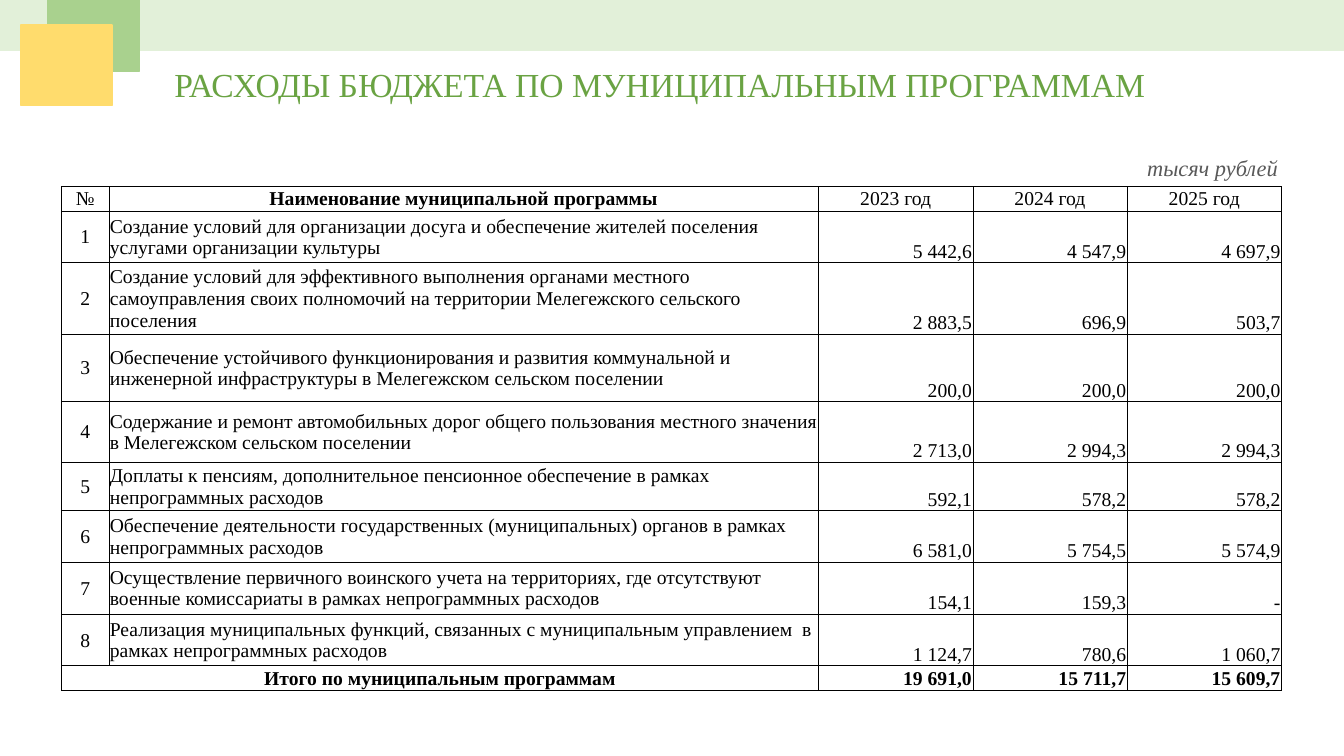
from lxml.etree import SubElement
from pptx import Presentation
from pptx.dml.color import RGBColor
from pptx.enum.shapes import MSO_SHAPE
from pptx.enum.text import MSO_ANCHOR, PP_ALIGN
from pptx.oxml.ns import qn
from pptx.util import Inches, Pt

FONT = "Times New Roman"
YEARS = ["2023 год", "2024 год", "2025 год"]
PROGRAMS = [
    ("Создание условий для организации досуга и обеспечение жителей поселения "
     "услугами организации культуры", "5 442,6", "4 547,9", "4 697,9"),
    ("Создание условий для эффективного выполнения органами местного самоуправления "
     "своих полномочий на территории Мелегежского сельского поселения",
     "2 883,5", "696,9", "503,7"),
    ("Обеспечение устойчивого функционирования и развития коммунальной и инженерной "
     "инфраструктуры в Мелегежском сельском поселении", "200,0", "200,0", "200,0"),
    ("Содержание и ремонт автомобильных дорог общего пользования местного значения "
     "в Мелегежском сельском поселении", "2 713,0", "2 994,3", "2 994,3"),
    ("Доплаты к пенсиям, дополнительное пенсионное обеспечение в рамках "
     "непрограммных расходов", "592,1", "578,2", "578,2"),
    ("Обеспечение деятельности государственных (муниципальных) органов в рамках "
     "непрограммных расходов", "6 581,0", "5 754,5", "5 574,9"),
    ("Осуществление первичного воинского учета на территориях, где отсутствуют "
     "военные комиссариаты в рамках непрограммных расходов", "154,1", "159,3", "-"),
    ("Реализация муниципальных функций, связанных с муниципальным управлением  в "
     "рамках непрограммных расходов", "1 124,7", "780,6", "1 060,7"),
]
TOTALS = ["19 691,0", "15 711,7", "15 609,7"]
COLUMN_WIDTHS = [0.47, 7.04] + [1.53] * len(YEARS)
ROW_HEIGHTS = [0.24, 0.51, 0.71, 0.67, 0.6, 0.48, 0.51, 0.52, 0.51, 0.24]


def color(hex_string):
    return RGBColor.from_string(hex_string)


def write(frame, text, size, hex_string, align, bold=False, italic=False):
    paragraph = frame.paragraphs[0]
    paragraph.alignment = align
    run = paragraph.add_run()
    run.text = text
    run.font.name, run.font.size = FONT, Pt(size)
    run.font.bold, run.font.italic = bold, italic
    run.font.color.rgb = color(hex_string)


prs = Presentation()
prs.slide_width, prs.slide_height = Inches(13.33), Inches(7.5)
slide = prs.slides.add_slide(prs.slide_layouts[5])

# Title and unit of measure
title = slide.shapes.title
title.left, title.top = Inches(1.63), Inches(0.58)
title.width, title.height = Inches(9.93), Inches(0.5)
title.text_frame.word_wrap = False
title.text_frame.vertical_anchor = MSO_ANCHOR.MIDDLE
write(title.text_frame, "РАСХОДЫ БЮДЖЕТА ПО МУНИЦИПАЛЬНЫМ ПРОГРАММАМ", 24, "6AA343",
      PP_ALIGN.LEFT)

unit = slide.shapes.add_textbox(Inches(11.28), Inches(1.48), Inches(1.52), Inches(0.37))
unit.text_frame.word_wrap = False
write(unit.text_frame, "тысяч рублей", 16, "595959", PP_ALIGN.LEFT, italic=True)

# Header band and overlapping squares
for left, top, width, height, tint in [
    (0, 0, 13.33, 0.5, "E2F0D9"),
    (0.47, 0, 0.91, 0.71, "A9D18E"),
    (0.21, 0.25, 0.9, 0.8, "FFDC6D"),
]:
    block = slide.shapes.add_shape(MSO_SHAPE.RECTANGLE, Inches(left), Inches(top),
                                   Inches(width), Inches(height))
    block.shadow.inherit = False
    block.fill.solid()
    block.fill.fore_color.rgb = color(tint)
    block.line.color.rgb = color(tint)
    block.line.width = Pt(1)

# Budget table
rows = [["№", "Наименование муниципальной программы", *YEARS]]
rows += [[str(number), *program] for number, program in enumerate(PROGRAMS, 1)]
rows.append(["Итого по муниципальным программам", "", *TOTALS])
last = len(rows) - 1

budget = slide.shapes.add_table(
    len(rows), len(COLUMN_WIDTHS), Inches(0.61), Inches(1.85),
    Inches(sum(COLUMN_WIDTHS)), Inches(sum(ROW_HEIGHTS))).table
budget.first_row = budget.horz_banding = False
for column, width in zip(budget.columns, COLUMN_WIDTHS):
    column.width = Inches(width)
for row, height in zip(budget.rows, ROW_HEIGHTS):
    row.height = Inches(height)
budget.cell(last, 0).merge(budget.cell(last, 1))

for r, row in enumerate(rows):
    for c, text in enumerate(row):
        cell = budget.cell(r, c)
        is_amount = r > 0 and c > 1
        is_name = 0 < r < last and c == 1
        cell.margin_left = cell.margin_right = cell.margin_top = Inches(0.01)
        cell.margin_bottom = 0
        cell.vertical_anchor = MSO_ANCHOR.BOTTOM if is_amount else MSO_ANCHOR.MIDDLE

        properties = cell._tc.get_or_add_tcPr()
        for side in ("a:lnL", "a:lnR", "a:lnT", "a:lnB"):
            border = SubElement(properties, qn(side), w=str(Pt(0.5)))
            SubElement(SubElement(border, qn("a:solidFill")), qn("a:srgbClr"), val="000000")

        if is_name or (r == last and c < 2):
            cell.fill.solid()
            cell.fill.fore_color.rgb = color("FFFFFF")
        else:
            cell.fill.background()

        if not cell.is_spanned:
            align = (PP_ALIGN.RIGHT if is_amount
                     else PP_ALIGN.LEFT if is_name else PP_ALIGN.CENTER)
            write(cell.text_frame, text, 14, "000000", align,
                  bold=r == last or (r == 0 and c == 1))

prs.save("out.pptx")
